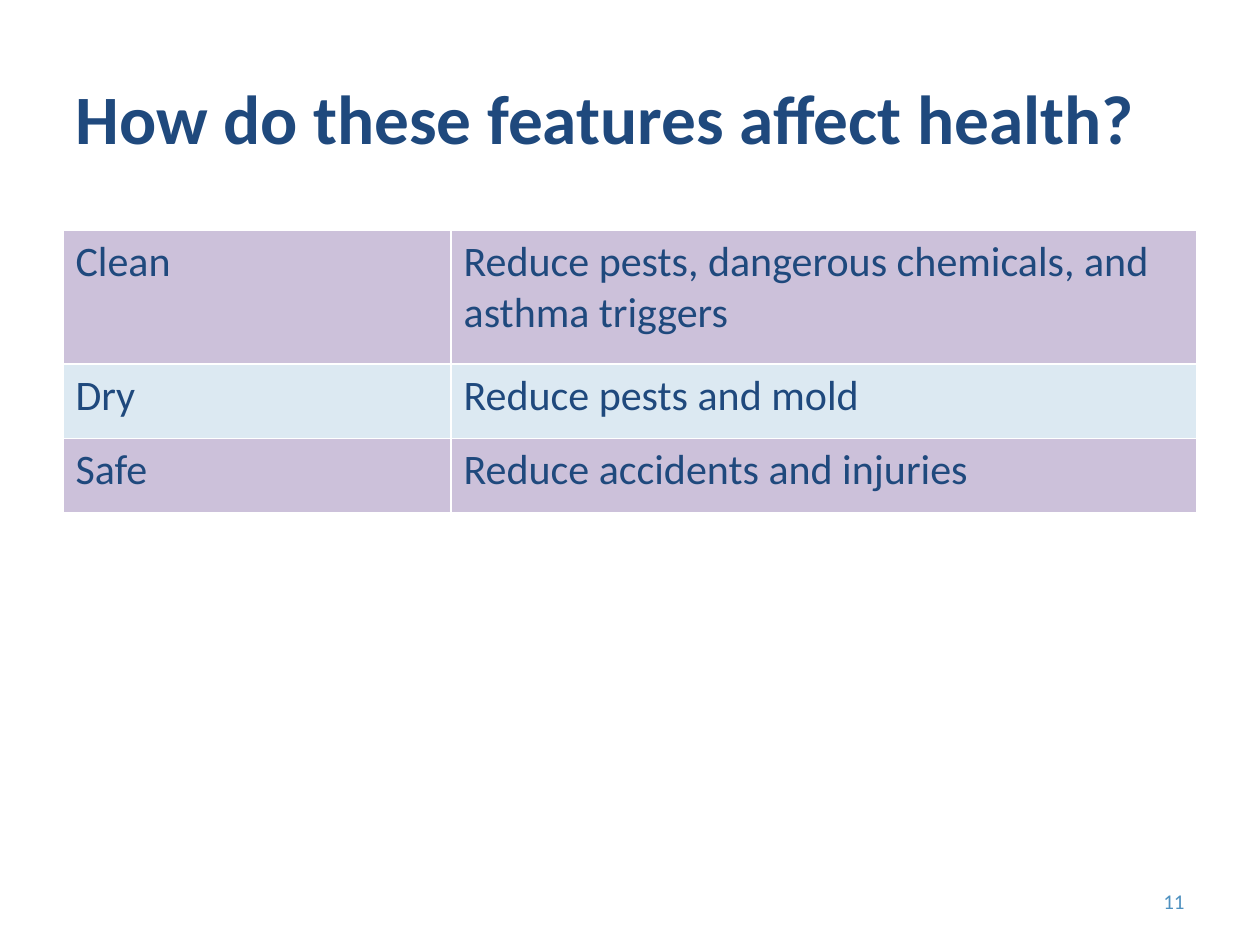
from lxml import etree
from pptx import Presentation
from pptx import util as u
from pptx.dml.color import RGBColor
from pptx.enum import text
from pptx.oxml import ns

NAVY = RGBColor(0x1F, 0x49, 0x7D)
BLUE = RGBColor(0x4F, 0x91, 0xC0)
LILAC = RGBColor(0xCC, 0xC1, 0xDA)
PALE_BLUE = RGBColor(0xDC, 0xE9, 0xF2)
WHITE = RGBColor(0xFF, 0xFF, 0xFF)

FEATURES = [
    ("Clean", "Reduce pests, dangerous chemicals, and asthma triggers"),
    ("Dry", "Reduce pests and mold"),
    ("Safe", "Reduce accidents and injuries"),
]
COLUMN_WIDTHS = [3.08, 5.92]
ROW_HEIGHTS = [1.06, 0.59, 0.59]
MARGIN = 0.5


def write(text_frame, wording, size, color, bold=False, align=text.PP_ALIGN.LEFT):
    text_frame.text = wording
    text_frame.word_wrap = True
    paragraph = text_frame.paragraphs[0]
    paragraph.alignment = align
    font = paragraph.runs[0].font
    font.name = "Calibri"
    font.size = u.Pt(size)
    font.bold = bold
    font.color.rgb = color


def add_borders(cell, color, width):
    properties = cell._tc.get_or_add_tcPr()
    for side in ("a:lnL", "a:lnR", "a:lnT", "a:lnB"):
        line = etree.SubElement(properties, ns.qn(side), w=str(u.Pt(width)))
        fill = etree.SubElement(line, ns.qn("a:solidFill"))
        etree.SubElement(fill, ns.qn("a:srgbClr"), val=str(color))


presentation = Presentation()
presentation.slide_width = u.Inches(10)
presentation.slide_height = u.Inches(7.5)
slide = presentation.slides.add_slide(presentation.slide_layouts[6])

content_width = sum(COLUMN_WIDTHS)
title = slide.shapes.add_textbox(
    u.Inches(MARGIN), u.Inches(0.3), u.Inches(content_width), u.Inches(1.25)
)
title.text_frame.vertical_anchor = text.MSO_ANCHOR.MIDDLE
write(title.text_frame, "How do these features affect health?", 39.6, NAVY, bold=True)

table = slide.shapes.add_table(
    len(FEATURES), len(COLUMN_WIDTHS), u.Inches(MARGIN), u.Inches(1.83),
    u.Inches(content_width), u.Inches(sum(ROW_HEIGHTS)),
).table
table.first_row = False
table.horz_banding = False
for column, width in zip(table.columns, COLUMN_WIDTHS):
    column.width = u.Inches(width)

for index, (row, height, wordings) in enumerate(zip(table.rows, ROW_HEIGHTS, FEATURES)):
    row.height = u.Inches(height)
    for cell, wording in zip(row.cells, wordings):
        write(cell.text_frame, wording, 24, NAVY)
        add_borders(cell, WHITE, 1)
        cell.fill.solid()
        cell.fill.fore_color.rgb = PALE_BLUE if index % 2 else LILAC

number_width = 2.33
page_number = slide.shapes.add_textbox(
    u.Inches(MARGIN + content_width - number_width), u.Inches(6.95),
    u.Inches(number_width), u.Inches(0.4),
)
page_number.text_frame.vertical_anchor = text.MSO_ANCHOR.MIDDLE
write(page_number.text_frame, "11", 12, BLUE, align=text.PP_ALIGN.RIGHT)

presentation.save("out.pptx")
